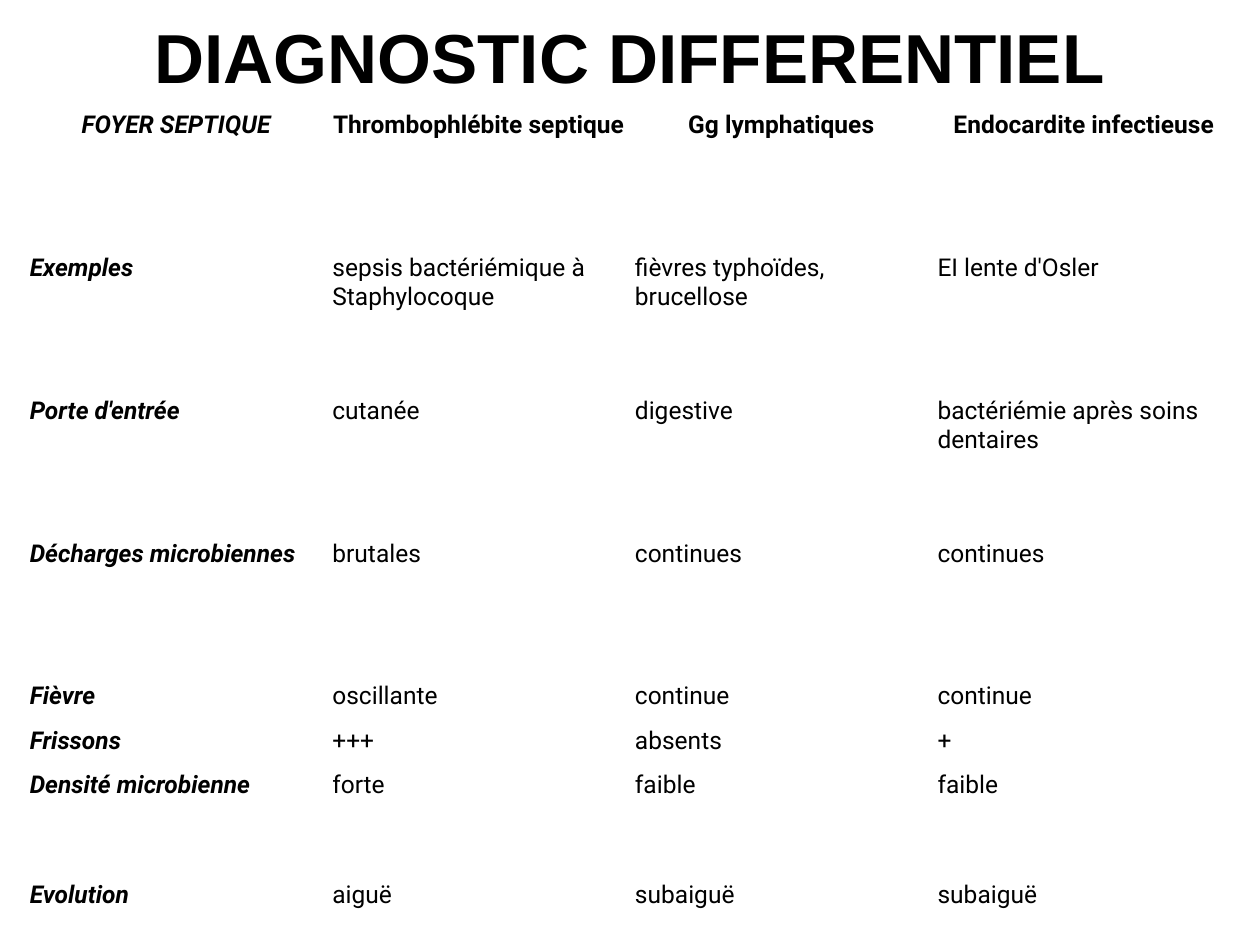
from dataclasses import dataclass

from pptx import Presentation
from pptx import util as u
from pptx.dml.color import RGBColor
from pptx.enum import text

BLACK = RGBColor(0x00, 0x00, 0x00)
WHITE = RGBColor(0xFF, 0xFF, 0xFF)

COL_WIDTH = u.Cm(6.1)
CELL_MARGIN = u.Cm(0.1)
TALL, MEDIUM, SHORT = u.Cm(2.88), u.Cm(2.22), u.Cm(0.89)


@dataclass
class Row:
    height: int
    label: str
    values: tuple[str, ...]
    header: bool = False


ROWS = [
    Row(TALL, "FOYER SEPTIQUE",
        ("Thrombophlébite septique", "Gg lymphatiques", "Endocardite infectieuse"), header=True),
    Row(TALL, "Exemples",
        ("sepsis bactériémique à Staphylocoque", "fièvres typhoïdes, brucellose",
         "EI lente d'Osler")),
    Row(TALL, "Porte d'entrée",
        ("cutanée", "digestive", "bactériémie après soins dentaires")),
    Row(TALL, "Décharges microbiennes", ("brutales", "continues", "continues")),
    Row(SHORT, "Fièvre", ("oscillante", "continue", "continue")),
    Row(SHORT, "Frissons", ("+++", "absents", "+")),
    Row(MEDIUM, "Densité microbienne", ("forte", "faible", "faible")),
    Row(SHORT, "Evolution", ("aiguë", "subaiguë", "subaiguë")),
]


def format_text(p, font: str, size: float, bold: bool, italic: bool, centred: bool) -> None:
    p.alignment = text.PP_ALIGN.CENTER if centred else text.PP_ALIGN.LEFT
    for r in p.runs:
        r.font.name = font
        r.font.size = u.Pt(size)
        r.font.bold = bold
        r.font.italic = italic
        r.font.color.rgb = BLACK


def add_title(s, title: str) -> None:
    sp = s.shapes.add_textbox(u.Cm(1.27), u.Cm(0.13), u.Cm(22.86), u.Cm(2))
    tf = sp.text_frame
    tf.word_wrap = True
    tf.vertical_anchor = text.MSO_ANCHOR.MIDDLE
    tf.text = title
    format_text(tf.paragraphs[0], "Arial", 39.6, bold=True, italic=False, centred=True)


def fill_cell(cell, value: str, bold: bool, italic: bool, centred: bool) -> None:
    cell.fill.solid()
    cell.fill.fore_color.rgb = WHITE
    cell.margin_left = cell.margin_right = CELL_MARGIN
    cell.margin_top = cell.margin_bottom = CELL_MARGIN
    cell.text_frame.text = value
    format_text(cell.text_frame.paragraphs[0], "Roboto", 14, bold, italic, centred)


def add_comparison(s, rows: list[Row]) -> None:
    n_cols = 1 + len(rows[0].values)
    height = sum(row.height for row in rows)
    table = s.shapes.add_table(len(rows), n_cols, u.Cm(0.5), u.Cm(2.13),
                               COL_WIDTH * n_cols, height).table
    for column in table.columns:
        column.width = COL_WIDTH
    for i, row in enumerate(rows):
        table.rows[i].height = row.height
        for j, value in enumerate((row.label, *row.values)):
            is_label = j == 0
            fill_cell(table.cell(i, j), value, bold=is_label or row.header,
                      italic=is_label, centred=row.header)


def main() -> None:
    prs = Presentation()
    prs.slide_width, prs.slide_height = u.Cm(25.4), u.Cm(19.05)
    s = prs.slides.add_slide(prs.slide_layouts[6])

    # Heading
    add_title(s, "DIAGNOSTIC DIFFERENTIEL")

    # Comparison of the septic foci
    add_comparison(s, ROWS)

    prs.save("out.pptx")


if __name__ == "__main__":
    main()
